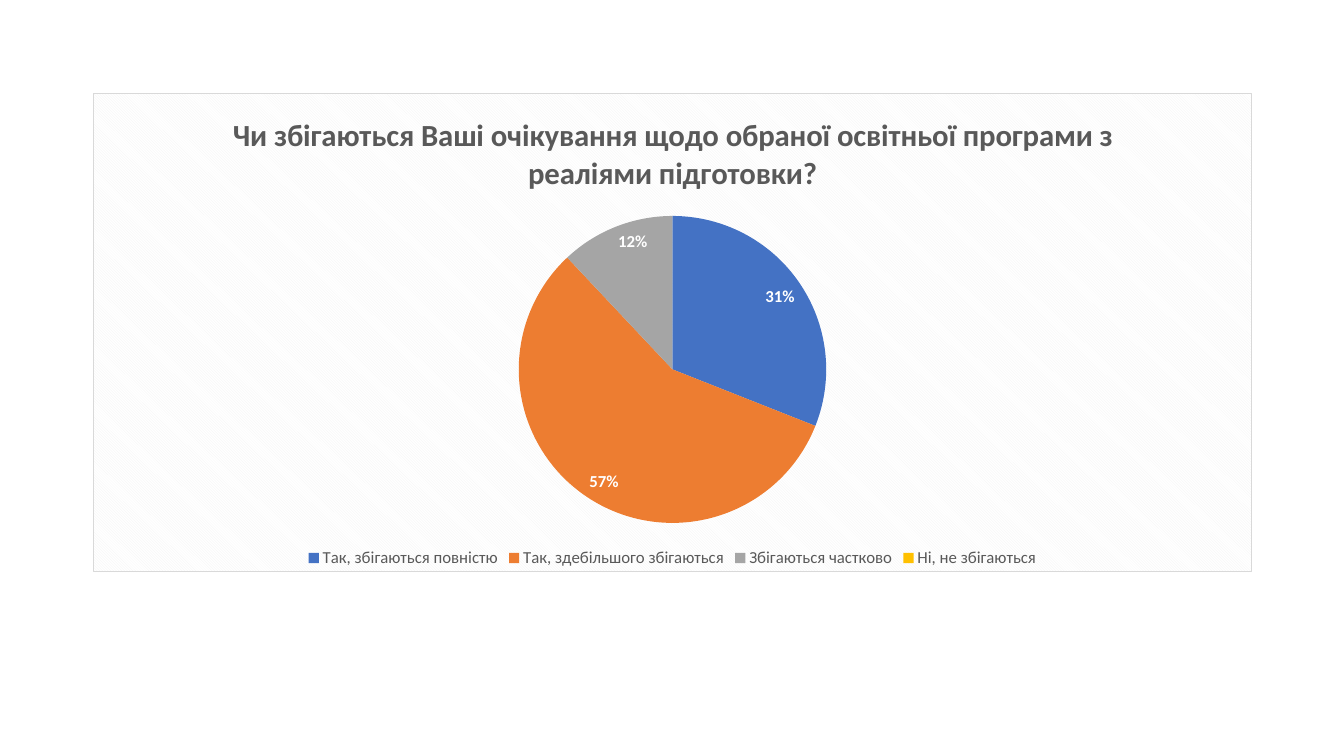
from dataclasses import dataclass

from pptx import Presentation
from pptx.chart.chart import Chart
from pptx.chart.data import CategoryChartData
from pptx.dml.color import RGBColor
from pptx.enum.chart import XL_CHART_TYPE as ChartType
from pptx.enum.chart import XL_LABEL_POSITION as LabelPos
from pptx.enum.chart import XL_LEGEND_POSITION as LegendPos
from pptx.oxml import parse_xml
from pptx.oxml.ns import nsdecls, qn
from pptx.text.text import Font
from pptx.util import Inches, Pt

BLUE = RGBColor(0x44, 0x72, 0xC4)
ORANGE = RGBColor(0xED, 0x7D, 0x31)
GREY = RGBColor(0xA5, 0xA5, 0xA5)
YELLOW = RGBColor(0xFF, 0xC0, 0x00)
DARK = RGBColor(0x59, 0x59, 0x59)
WHITE = RGBColor(0xFF, 0xFF, 0xFF)
STRIPE = RGBColor(0xF2, 0xF2, 0xF2)
BORDER = RGBColor(0xD9, 0xD9, 0xD9)

QUESTION = "Чи збігаються Ваші очікування щодо обраної освітньої програми з реаліями підготовки?"


@dataclass(frozen=True)
class Answer:
    text: str
    percent: int
    color: RGBColor


ANSWERS = [
    Answer("Так, збігаються повністю", 31, BLUE),
    Answer("Так, здебільшого збігаються", 57, ORANGE),
    Answer("Збігаються частково", 12, GREY),
    Answer("Ні, не збігаються", 0, YELLOW),
]


def style_font(font: Font, size: float, color: RGBColor, bold: bool = False) -> None:
    font.name = "Calibri"
    font.size = Pt(size)
    font.bold = bold
    font.color.rgb = color


def set_title(chart: Chart, text: str, *, size: float, color: RGBColor, bold: bool) -> None:
    chart.has_title = True
    chart.chart_title.include_in_layout = False
    p = chart.chart_title.text_frame.paragraphs[0]
    r = p.add_run()
    r.text = text
    style_font(r.font, size, color, bold)


def set_striped_area(chart: Chart, stripe: RGBColor, back: RGBColor, border: RGBColor) -> None:
    """Give the chart area a diagonal pattern and a thin border."""
    sp_pr = parse_xml(
        f'<c:spPr {nsdecls("c", "a")}>'
        f'<a:pattFill prst="dkDnDiag"><a:fgClr><a:srgbClr val="{stripe}"/></a:fgClr>'
        f'<a:bgClr><a:srgbClr val="{back}"/></a:bgClr></a:pattFill>'
        f'<a:ln w="{Pt(0.75)}"><a:solidFill><a:srgbClr val="{border}"/></a:solidFill></a:ln>'
        "</c:spPr>"
    )
    chart.element.find(qn("c:chart")).addnext(sp_pr)


def style_pie(chart: Chart, answers: list[Answer]) -> None:
    plot = chart.plots[0]
    plot.vary_by_categories = True
    for i, answer in enumerate(answers):
        fill = plot.series[0].points[i].format.fill
        fill.solid()
        fill.fore_color.rgb = answer.color

    labels = plot.series[0].data_labels
    labels.show_percentage = True
    labels.show_value = False
    labels.number_format = "0%;;"
    labels.number_format_is_linked = False
    labels.position = LabelPos.INSIDE_END
    style_font(labels.font, 12, WHITE, bold=True)


def main() -> None:
    prs = Presentation()
    prs.slide_width, prs.slide_height = Inches(13.33), Inches(7.5)
    s = prs.slides.add_slide(prs.slide_layouts[6])

    data = CategoryChartData()
    data.categories = [answer.text for answer in ANSWERS]
    data.add_series(QUESTION, [answer.percent for answer in ANSWERS])
    chart = s.shapes.add_chart(
        ChartType.PIE, Inches(0.92), Inches(0.92), Inches(11.5), Inches(4.76), data
    ).chart

    style_font(chart.font, 10, DARK)
    set_title(chart, QUESTION, size=22, color=DARK, bold=True)
    set_striped_area(chart, STRIPE, WHITE, BORDER)
    style_pie(chart, ANSWERS)
    chart.has_legend = True
    chart.legend.position = LegendPos.BOTTOM
    chart.legend.include_in_layout = False
    style_font(chart.legend.font, 12, DARK)

    prs.save("out.pptx")


if __name__ == "__main__":
    main()
